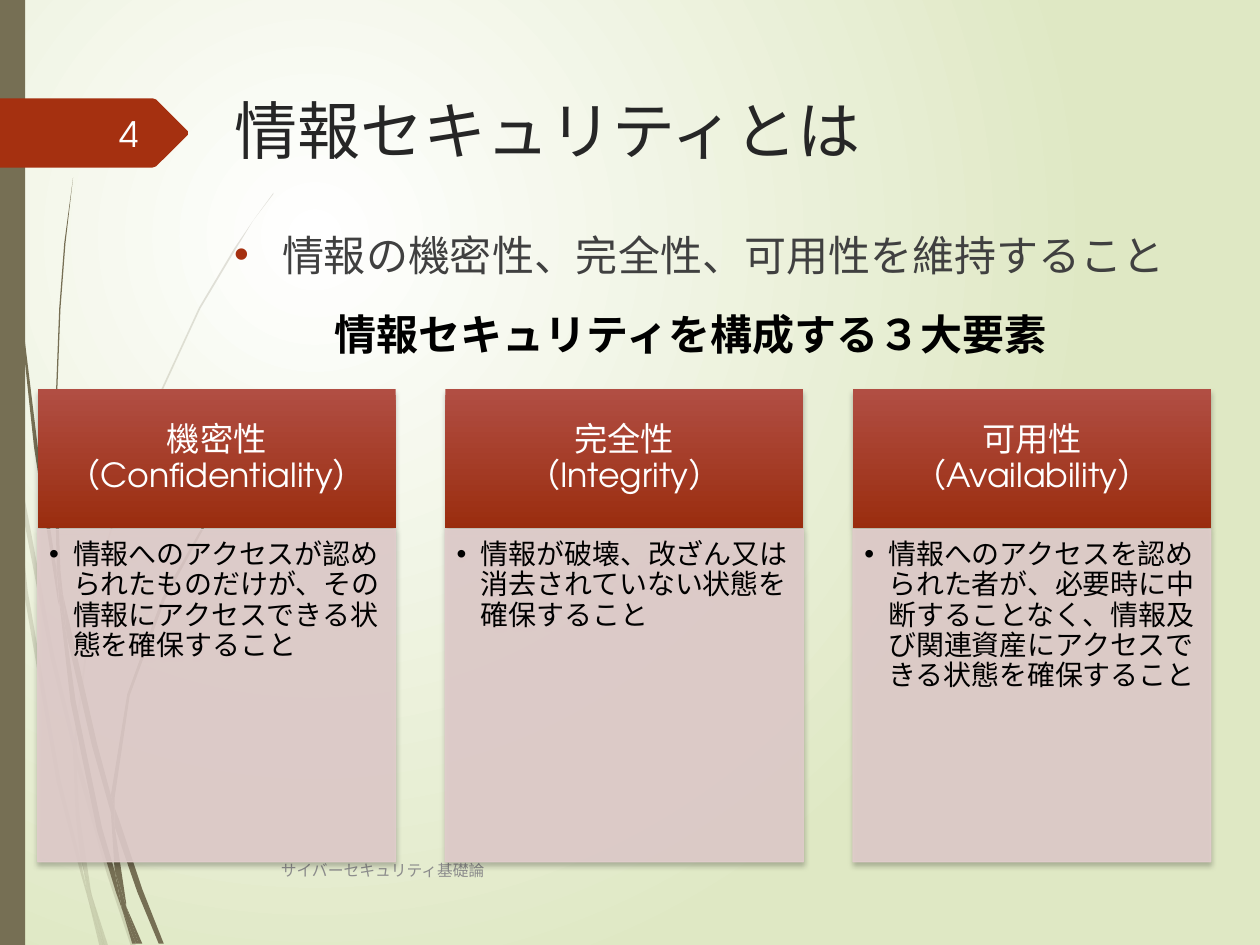
from dataclasses import dataclass

from lxml.etree import SubElement
from pptx import Presentation
from pptx.dml.color import RGBColor
from pptx.enum.shapes import MSO_SHAPE
from pptx.enum.text import MSO_ANCHOR as ANCHOR, PP_ALIGN as ALIGN
from pptx.oxml.ns import qn
from pptx.util import Inches, Pt


@dataclass(frozen=True)
class Theme:
    font: str = "TeX Gyre Adventor"
    olive: str = "766F54"
    red: str = "A53010"
    bg: tuple = ("FFFFFF", "DFE8C4")
    header: tuple = ("B14E43", "9A2D0F")
    panel: str = "E1CDCC"
    title: str = "262626"
    body: str = "404040"
    footer: str = "8C8C8C"
    black: str = "000000"
    white: str = "FFFFFF"
    number: str = "FEFFFF"
    title_pt: int = 36
    body_pt: int = 24
    number_pt: int = 20
    header_pt: int = 19
    panel_pt: int = 16
    footer_pt: int = 9


# Grass outlines: x, y pairs in hundredths of an inch
FAINT_GRASS = [
    [(8, 350), (6, 322), (0, 282), (0, 299), (7, 344)],
    [(40, 522), (59, 599), (59, 586), (43, 520), (10, 345), (12, 376)],
    [(64, 607), (61, 596), (61, 610), (85, 694), (104, 751), (108, 751), (88, 692)],
    [(83, 751), (86, 751), (73, 711)],
    [(64, 683), (48, 619), (22, 469), (12, 376), (8, 350), (19, 470), (45, 621),
     (64, 693), (70, 714), (69, 707)],
    [(58, 599), (60, 646), (64, 683), (67, 692), (73, 711), (72, 706), (63, 646),
     (61, 610), (61, 608)],
    [(61, 584), (76, 462), (111, 349), (159, 245), (187, 198), (201, 175), (217, 154),
     (217, 153), (201, 175), (186, 197), (158, 244), (110, 348), (75, 461), (59, 584),
     (59, 586), (61, 596)],
    [(70, 714), (79, 751), (82, 751)],
    [(61, 608), (61, 610), (61, 596), (59, 586), (58, 599)],
    [(67, 692), (65, 683), (69, 707), (70, 714), (82, 751), (83, 751), (73, 711)],
]
DARK_GRASS = [
    [(5, 110), (14, 233), (27, 355), (46, 477), (47, 481), (45, 457), (45, 453),
     (30, 355), (15, 232), (6, 109), (4, 48), (3, 0), (2, 0), (3, 48)],
    [(73, 592), (88, 645), (88, 633), (88, 631), (77, 590), (50, 472), (53, 505)],
    [(94, 649), (91, 641), (91, 656), (109, 708), (126, 749), (130, 749), (113, 706)],
    [(91, 691), (81, 657), (60, 556), (53, 505), (47, 477), (56, 557), (77, 659),
     (92, 708), (97, 722), (96, 717)],
    [(50, 472), (48, 453), (44, 349), (48, 245), (52, 193), (58, 141), (51, 193),
     (47, 245), (43, 349), (45, 449), (49, 472)],
    [(110, 749), (113, 749), (100, 719)],
    [(47, 477), (53, 505), (50, 472), (49, 472), (45, 449), (45, 453)],
    [(91, 633), (103, 552), (131, 476), (169, 406), (191, 374), (203, 359), (216, 344),
     (215, 344), (203, 358), (191, 373), (168, 405), (129, 474), (101, 551), (88, 631),
     (91, 641)],
    [(97, 722), (105, 749), (108, 749)],
    [(88, 645), (91, 691), (96, 706), (100, 719), (100, 716), (91, 656), (90, 651)],
    [(88, 645), (90, 651), (91, 656), (91, 641), (88, 631), (88, 633)],
    [(96, 706), (91, 691), (96, 717), (97, 722), (108, 749), (110, 749), (100, 719)],
]
NUMBER_TAG = [(0, 78), (121, 78), (124, 79), (149, 104), (149, 107), (124, 132),
              (121, 133), (0, 133)]

CARDS = [
    ("機密性（Confidentiality）",
     "情報へのアクセスが認められたものだけが、その情報にアクセスできる状態を確保すること"),
    ("完全性\n（Integrity）",
     "情報が破壊、改ざん又は消去されていない状態を確保すること"),
    ("可用性（Availability）",
     "情報へのアクセスを認められた者が、必要時に中断することなく、"
     "情報及び関連資産にアクセスできる状態を確保すること"),
]


def set_alpha(fill, percent):
    node = fill.fore_color._xFill.find(qn("a:srgbClr"))
    SubElement(node, qn("a:alpha"), val=str(percent * 1000))


def set_gradient(fill, colors):
    fill.gradient()
    for stop, color in zip(fill.gradient_stops, colors):
        stop.color.rgb = RGBColor.from_string(color)


class Deck:
    def __init__(self, prs, theme):
        self.theme = theme
        self.s = prs.slides.add_slide(prs.slide_layouts[6])

    def background(self):
        set_gradient(self.s.background.fill, self.theme.bg)
        grad = self.s.background._cSld.find(".//" + qn("a:gradFill"))
        grad.remove(grad.find(qn("a:lin")))
        radial = SubElement(grad, qn("a:path"), {"path": "circle"})
        SubElement(radial, qn("a:fillToRect"), l="50000", t="50000", r="100000", b="100000")

    def paint(self, sp, color, alpha=100):
        sp.shadow.inherit = False
        sp.fill.solid()
        sp.fill.fore_color.rgb = RGBColor.from_string(color)
        if alpha < 100:
            set_alpha(sp.fill, alpha)
        sp.line.fill.background()

    def outline(self, points, color, alpha=100):
        start, *rest = points
        builder = self.s.shapes.build_freeform(*start, scale=Inches(0.01))
        builder.add_line_segments(rest, close=True)
        self.paint(builder.convert_to_shape(), color, alpha)

    def rect(self, box, color, alpha=100):
        sp = self.s.shapes.add_shape(MSO_SHAPE.RECTANGLE, *map(Inches, box))
        self.paint(sp, color, alpha)
        return sp

    def soft_shadow(self, sp):
        effects = sp._element.spPr.find(qn("a:effectLst"))
        shadow = SubElement(effects, qn("a:outerShdw"), blurRad=str(Pt(3)), dist=str(Pt(2)),
                            dir="5400000", algn="ctr", rotWithShape="0")
        clr = SubElement(shadow, qn("a:srgbClr"), val=self.theme.black)
        SubElement(clr, qn("a:alpha"), val="25000")

    def label(self, sp, text, size, color, align=ALIGN.LEFT, anchor=ANCHOR.TOP,
              wrap=True, insets=(0.1, 0.05, 0.1, 0.05)):
        tf = sp.text_frame
        tf.word_wrap = wrap
        tf.vertical_anchor = anchor
        tf.margin_left, tf.margin_top, tf.margin_right, tf.margin_bottom = map(Inches, insets)
        p = tf.paragraphs[0]
        p.text = text
        p.alignment = align
        p.font.name = self.theme.font
        p.font.size = Pt(size)
        p.font.color.rgb = RGBColor.from_string(color)
        return p

    def text(self, box, text, size, color, **options):
        sp = self.s.shapes.add_textbox(*map(Inches, box))
        return self.label(sp, text, size, color, **options)

    def bullet(self, p, indent, color):
        pPr = p._p.get_or_add_pPr()
        pPr.set("marL", str(Inches(indent)))
        pPr.set("indent", str(-Inches(indent)))
        bu_color = pPr.makeelement(qn("a:buClr"), {})
        SubElement(bu_color, qn("a:srgbClr"), val=color)
        bu_font = pPr.makeelement(qn("a:buFont"), {"typeface": "Arial"})
        bu_char = pPr.makeelement(qn("a:buChar"), {"char": "•"})
        # Bullet elements come before the default run properties
        for node in (bu_color, bu_font, bu_char):
            pPr.find(qn("a:defRPr")).addprevious(node)

    def card(self, left, heading, detail):
        t, width = self.theme, 2.84
        sp = self.rect((left, 3.09, width, 1.1), t.header[0])
        set_gradient(sp.fill, t.header)
        sp.fill.gradient_angle = 270
        self.soft_shadow(sp)
        p = self.label(sp, heading, t.header_pt, t.white, align=ALIGN.CENTER,
                       anchor=ANCHOR.MIDDLE, insets=(0.15, 0.08, 0.15, 0.08))
        p.line_spacing = 0.9

        sp = self.rect((left, 4.2, width, 2.64), t.panel, 90)
        sp.line.color.rgb = RGBColor.from_string(t.panel)
        sp.line.width = Pt(0.75)
        set_alpha(sp.line.fill, 90)
        self.soft_shadow(sp)
        p = self.label(sp, detail, t.panel_pt, t.black, insets=(0.09, 0.09, 0.12, 0.14))
        p.line_spacing = 0.9
        self.bullet(p, 0.19, t.black)


def main():
    prs = Presentation()
    prs.slide_width, prs.slide_height = Inches(10), Inches(7.5)
    t = Theme()
    deck = Deck(prs, t)

    # Backdrop
    deck.background()
    for blade in FAINT_GRASS:
        deck.outline(blade, t.olive, 20)
    for blade in DARK_GRASS:
        deck.outline(blade, t.olive)
    deck.rect((0, 0, 0.2, 7.5), t.olive)
    deck.outline(NUMBER_TAG, t.red)

    # Title, message, footer and slide number
    deck.text((1.76, 0.68, 7.58, 0.91), "情報セキュリティとは", t.title_pt, t.title)
    p = deck.text((1.76, 1.77, 7.58, 4.7), "情報の機密性、完全性、可用性を維持すること",
                  t.body_pt, t.body)
    p.space_before = Pt(10)
    deck.bullet(p, 0.38, t.red)
    deck.text((2.13, 6.71, 6.25, 0.4), "サイバーセキュリティ基礎論", t.footer_pt, t.footer,
              anchor=ANCHOR.MIDDLE)
    deck.text((0.56, 0.86, 0.64, 0.4), "4", t.number_pt, t.number, align=ALIGN.RIGHT,
              anchor=ANCHOR.MIDDLE)

    # Three elements
    for i, (heading, detail) in enumerate(CARDS):
        deck.card(0.3 + i * 6.47 / 2, heading, detail)
    p = deck.text((2.56, 2.4, 5.92, 0.5), "情報セキュリティを構成する３大要素",
                  t.body_pt, t.black, wrap=False)
    p.font.bold = True

    prs.save("out.pptx")


if __name__ == "__main__":
    main()
